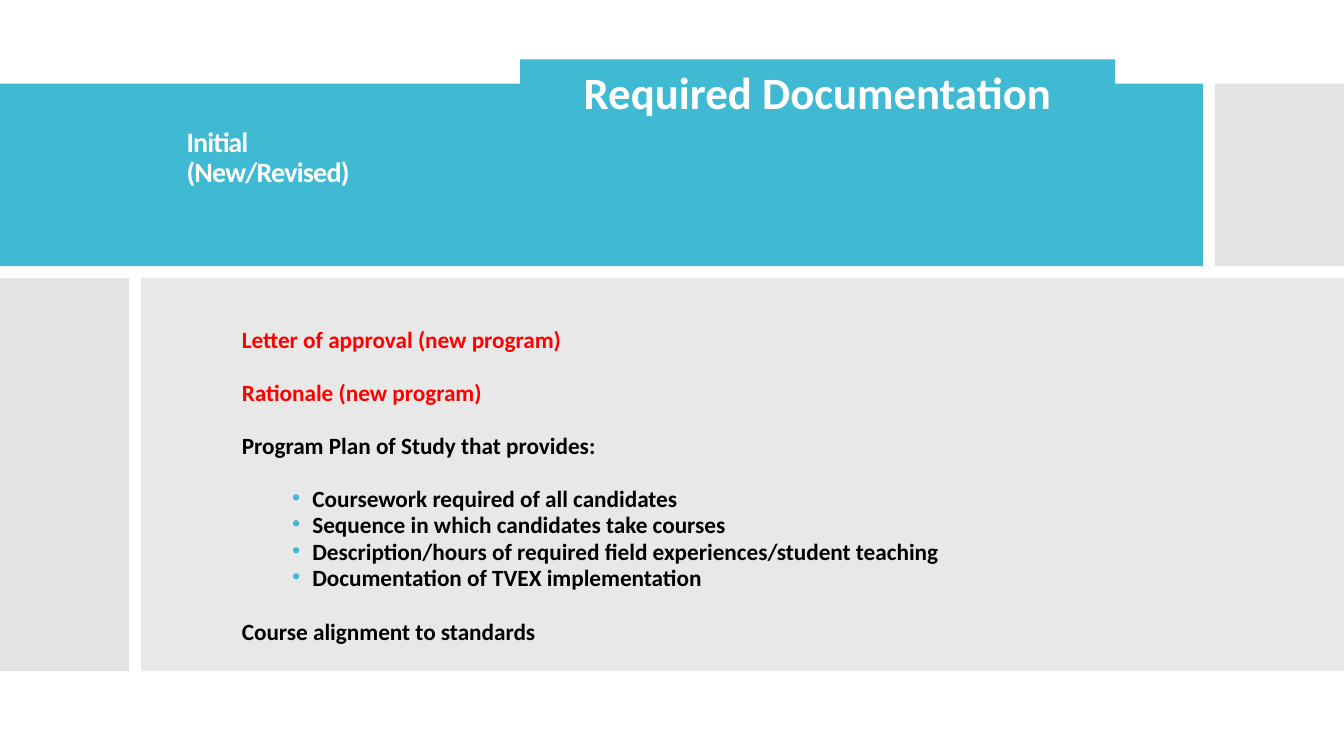
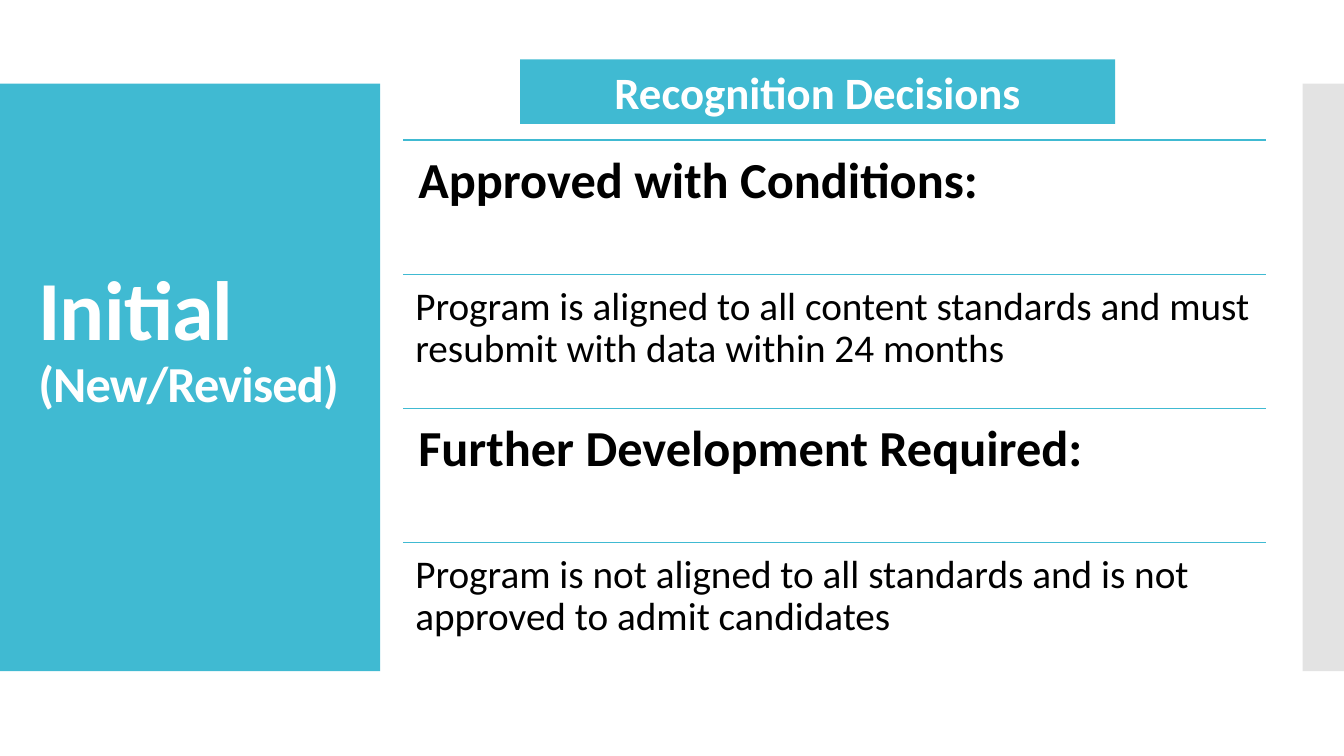
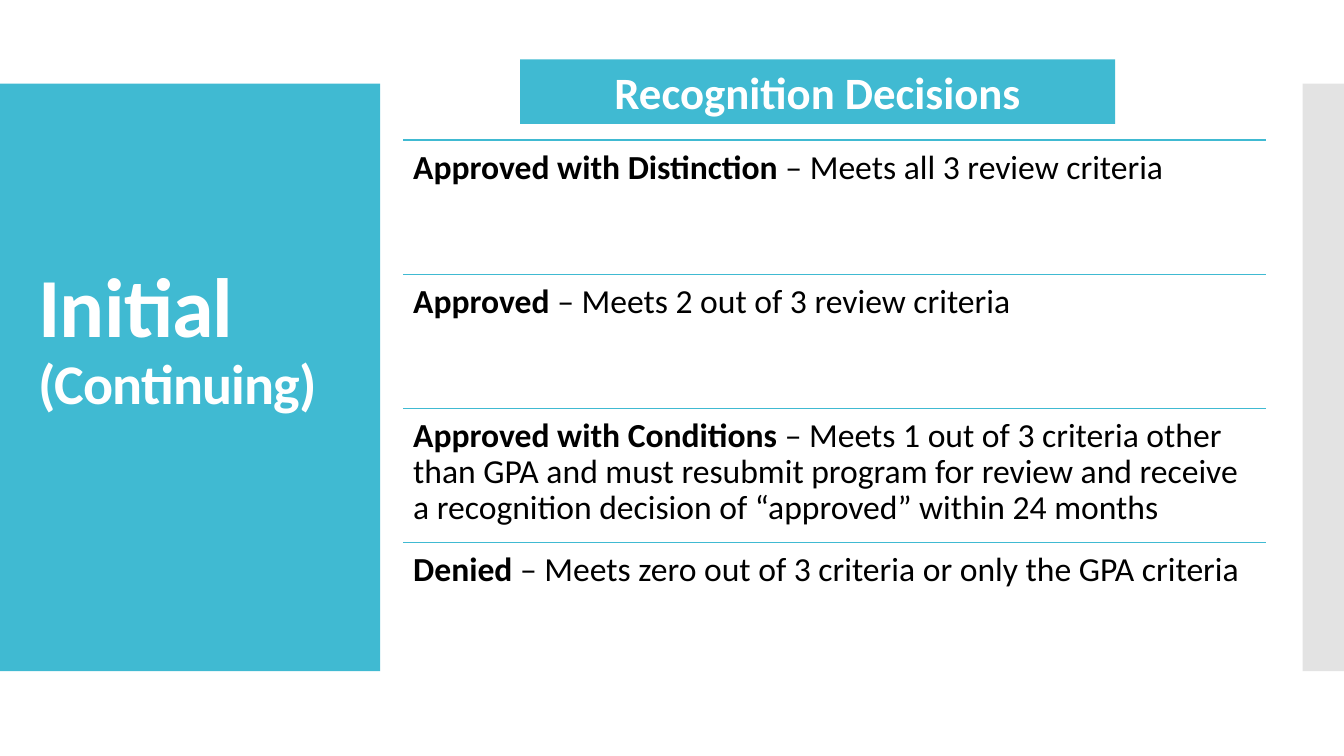
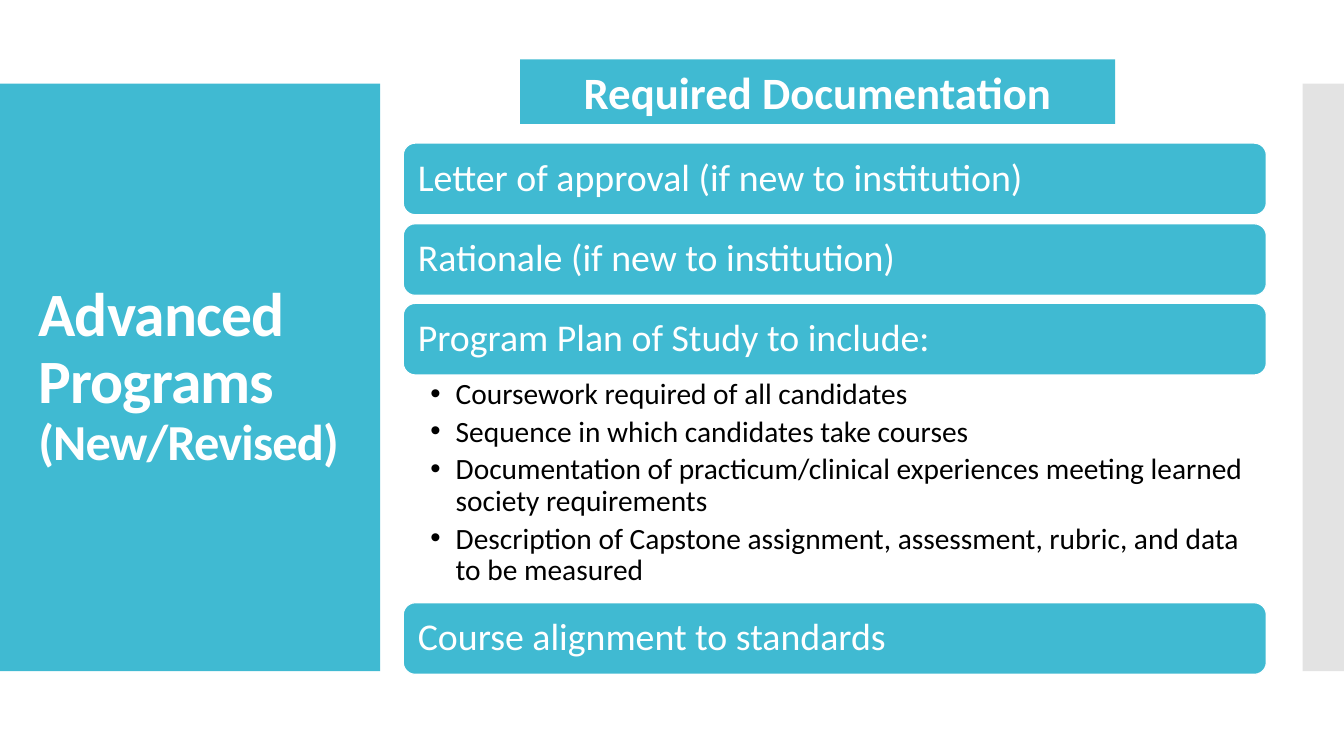
from lxml import etree
from pptx import Presentation
from pptx.dml.color import RGBColor
from pptx.enum import shapes, text
from pptx.oxml import ns
from pptx.util import Inches, Pt

TEAL, GREY, PALE, WHITE, BLACK, RED = "40BAD2", "C8C8C8", "D9D9D9", "FFFFFF", "000000", "FF0000"
RECT, ROUNDED = shapes.MSO_SHAPE.RECTANGLE, shapes.MSO_SHAPE.ROUNDED_RECTANGLE


def box(s, at, fill, kind=RECT, alpha=None, line=None):
    sp = s.shapes.add_shape(kind, *map(Inches, at))
    sp.shadow.inherit = False
    sp.fill.solid()
    sp.fill.fore_color.rgb = RGBColor.from_string(fill)
    if alpha:
        clr = sp.element.spPr.find(".//" + ns.qn("a:srgbClr"))
        etree.SubElement(clr, ns.qn("a:alpha"), val=str(alpha * 1000))
    if line:
        sp.line.color.rgb = RGBColor.from_string(line)
        sp.line.width = Pt(0.85)
    else:
        sp.line.fill.background()
    return sp


def write(tf, content, size, color=BLACK, bold=False, lead="", align=text.PP_ALIGN.LEFT,
          spacing=0.9, before=0, after=0, bullet=None, indent=0, hang=0, spc=0):
    tf.word_wrap = True
    p = tf.paragraphs[0]
    if p.runs:
        p = tf.add_paragraph()
    p.alignment = align
    p.line_spacing, p.space_before, p.space_after = spacing, Pt(before), Pt(after)
    if bullet:
        pPr = p._p.get_or_add_pPr()
        pPr.set("marL", str(Inches(indent)))
        pPr.set("indent", str(-Inches(hang)))
        clr = etree.SubElement(pPr, ns.qn("a:buClr"))
        etree.SubElement(clr, ns.qn("a:srgbClr"), val=bullet)
        etree.SubElement(pPr, ns.qn("a:buFont"), typeface="Arial")
        etree.SubElement(pPr, ns.qn("a:buChar"), char="•")
    for part, heavy in ((lead, True), (content, bold)):
        if part:
            r = p.add_run()
            r.text = part
            r.font.name, r.font.size, r.font.bold = "Calibri", Pt(size), heavy
            r.font.color.rgb = RGBColor.from_string(color)
            if spc:
                r._r.get_or_add_rPr().set("spc", str(spc))


prs = Presentation()
prs.slide_width, prs.slide_height = Inches(13.33), Inches(7.5)

side_bands = [((0, 0.83, 3.77, 5.83), TEAL, None), ((12.92, 0.83, 0.41, 5.83), GREY, 50)]
top_bands = [
    ((0, 0.83, 11.93, 1.81), TEAL, None),
    ((12.05, 0.83, 1.28, 1.81), GREY, 50),
    ((0, 2.76, 1.28, 3.9), GREY, 50),
    ((1.4, 2.76, 11.93, 3.9), PALE, 60),
]
frames = [
    (top_bands, (1.75, 1.19, 9.82, 0.76), [("Initial", 20), ("(New/Revised)", 20)],
     "Required Documentation"),
    (side_bands, (0.28, 1.23, 3.5, 4.3), [("Initial", 60), ("(New/Revised)", 36)],
     "Recognition Decisions"),
    (side_bands, (0.28, 1.23, 3.5, 4.3), [("Initial", 60), ("(Continuing)", 40)],
     "Recognition Decisions"),
    (side_bands, (0.28, 1.23, 3.5, 5.03), [("Advanced Programs", 44), ("(New/Revised)", 36)],
     "Required Documentation"),
]
for bands, at, lines, heading in frames:
    s = prs.slides.add_slide(prs.slide_layouts[5])
    for band, fill, alpha in bands:
        box(s, band, fill, alpha=alpha)
    title = s.shapes.title
    title.element.getparent().append(title.element)
    title.left, title.top, title.width, title.height = map(Inches, at)
    tf = title.text_frame
    tf.auto_size = text.MSO_AUTO_SIZE.NONE
    tf.vertical_anchor = text.MSO_ANCHOR.MIDDLE
    for line, size in lines:
        write(tf, line, size, color=WHITE, bold=True, spc=-60)
    banner = box(s, (5.16, 0.59, 5.9, 0.64), TEAL)
    write(banner.text_frame, heading, 32, color=WHITE, bold=True,
          align=text.PP_ALIGN.CENTER, spacing=1.0)

documents, new_decisions, continuing_decisions, advanced = prs.slides

tf = documents.shapes.add_textbox(*map(Inches, (2.3, 3.25, 9.2, 3.3))).text_frame
gap = 21.5
for line, color, before, bullet in [
    ("Letter of approval (new program)", RED, 0, None),
    ("Rationale (new program)", RED, gap, None),
    ("Program Plan of Study that provides:", BLACK, gap, None),
    ("Coursework required of all candidates", BLACK, gap, TEAL),
    ("Sequence in which candidates take courses", BLACK, 2.5, TEAL),
    ("Description/hours of required field experiences/student teaching", BLACK, 2.5, TEAL),
    ("Documentation of TVEX implementation", BLACK, 2.5, TEAL),
    ("Course alignment to standards", BLACK, gap, None),
]:
    write(tf, line, 16.6, color=color, bold=True, spacing=0.7, before=before, after=2.5,
          bullet=bullet, indent=0.7, hang=0.2)

decisions = [
    (new_decisions, [
        ("Approved with Conditions:", "", 36, 0.15),
        ("", "Program is aligned to all content standards and must resubmit with data "
             "within 24 months", 28, 0.12),
        ("Further Development Required:", "", 36, 0.15),
        ("", "Program is not aligned to all standards and is not approved to admit "
             "candidates", 28, 0.12),
    ]),
    (continuing_decisions, [
        ("Approved with Distinction", " – Meets all 3 review criteria", 24, 0.1),
        ("Approved", " – Meets 2 out of 3 review criteria", 24, 0.1),
        ("Approved with Conditions", " – Meets 1 out of 3 criteria other than GPA and must "
         "resubmit program for review and receive a recognition decision of “approved” "
         "within 24 months", 24, 0.1),
        ("Denied", " – Meets zero out of 3 criteria or only the GPA criteria", 24, 0.1),
    ]),
]
for s, rows in decisions:
    for i, (lead, content, size, inset) in enumerate(rows):
        top = 1.39 + 1.33 * i
        rule = s.shapes.add_connector(shapes.MSO_CONNECTOR.STRAIGHT,
                                      *map(Inches, (4, top, 12.56, top)))
        rule.line.fill.solid()
        rule.line.fill.fore_color.rgb = RGBColor.from_string(TEAL)
        rule.line.width = Pt(0.85)
        etree.SubElement(rule.element.spPr, ns.qn("a:effectLst"))
        rule.element.remove(rule.element.find(ns.qn("p:style")))
        tf = s.shapes.add_textbox(*map(Inches, (4, top, 8.56, 1.33))).text_frame
        tf.margin_left = tf.margin_right = tf.margin_top = tf.margin_bottom = Inches(inset)
        write(tf, content, size, lead=lead)

for top, line in [
    (1.42, "Letter of approval (if new to institution)"),
    (2.22, "Rationale (if new to institution)"),
    (3.01, "Program Plan of Study to include:"),
    (5.98, "Course alignment to standards"),
]:
    bar = box(advanced, (4, top, 8.56, 0.71), TEAL, kind=ROUNDED, line=WHITE)
    bar.text_frame.margin_left = Inches(0.11)
    write(bar.text_frame, line, 27, color=WHITE)

tf = advanced.shapes.add_textbox(*map(Inches, (4, 3.72, 8.56, 2.26))).text_frame
tf.margin_left, tf.margin_right = Inches(0.27), Inches(0.21)
tf.margin_top = tf.margin_bottom = Inches(0.04)
for line in [
    "Coursework required of all candidates",
    "Sequence in which candidates take courses",
    "Documentation of practicum/clinical experiences meeting learned society requirements",
    "Description of Capstone assignment, assessment, rubric, and data to be measured",
]:
    write(tf, line, 21, after=4.2, bullet=BLACK, indent=0.25, hang=0.25)

prs.save("out.pptx")
